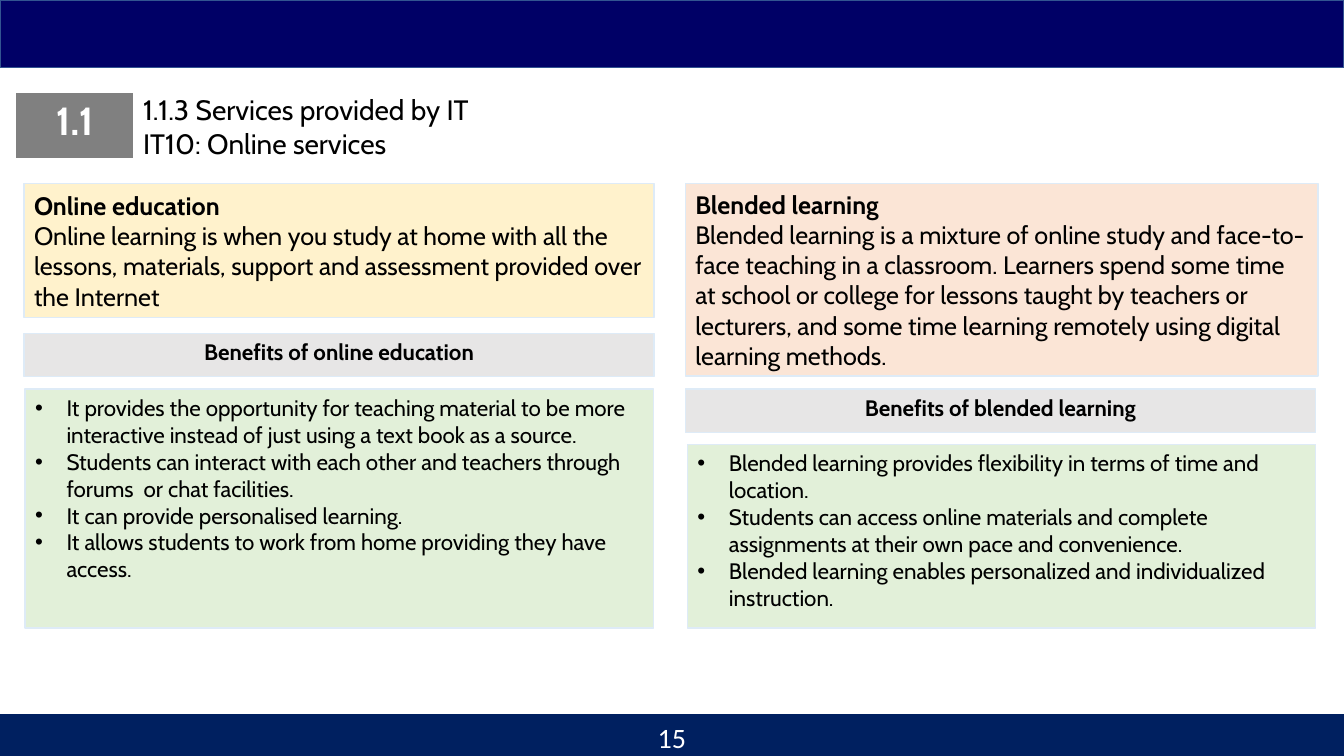
import dataclasses

import lxml.etree
import pptx
import pptx.dml.color
import pptx.enum.shapes
import pptx.enum.text
import pptx.oxml.ns
import pptx.util

Pt = pptx.util.Pt
Align = pptx.enum.text.PP_ALIGN
Anchor = pptx.enum.text.MSO_ANCHOR


@dataclasses.dataclass(frozen=True)
class Theme:
    font: str = "Cabin"
    number_font: str = "Calibri"
    ink: str = "000000"
    white: str = "FFFFFF"
    banner: str = "000066"
    banner_edge: str = "325491"
    footer: str = "002060"
    badge: str = "808080"
    panel_edge: str = "DEEBF7"
    online: str = "FFF2CC"
    blended: str = "FBE5D6"
    caption: str = "E7E6E6"
    benefits: str = "E2F0D9"
    badge_size: float = 28
    heading_size: float = 20
    definition_size: float = 18
    list_size: float = 16


THEME = Theme()
SLIDE_WIDTH, SLIDE_HEIGHT = 960, 540
BENEFITS_BOTTOM = 448.6


def rgb(code):
    return pptx.dml.color.RGBColor.from_string(code)


def add_bullet(paragraph, indent=22.5):
    properties = paragraph._p.get_or_add_pPr()
    properties.set("marL", str(Pt(indent)))
    properties.set("indent", str(-Pt(indent)))
    for tag, attribute, value in (("a:buFont", "typeface", "Arial"), ("a:buChar", "char", "•")):
        bullet = lxml.etree.SubElement(properties, pptx.oxml.ns.qn(tag))
        bullet.set(attribute, value)


def write(frame, lines, size, color=THEME.ink, font=THEME.font, align=Align.LEFT,
          anchor=Anchor.TOP, bold_lines=0, bullets=False):
    """Fill a frame with one paragraph per line; the first bold_lines are bold."""
    frame.word_wrap = True
    frame.vertical_anchor = anchor
    for index, line in enumerate(lines):
        paragraph = frame.paragraphs[0] if index == 0 else frame.add_paragraph()
        paragraph.alignment = align
        paragraph.line_spacing = 1.0
        paragraph.space_before = paragraph.space_after = Pt(0)
        if bullets:
            add_bullet(paragraph)
        run = paragraph.add_run()
        run.text = line
        run.font.name = font
        run.font.size = Pt(size)
        run.font.bold = index < bold_lines
        run.font.color.rgb = rgb(color)


def paint(shape, fill, edge):
    shape.fill.solid()
    shape.fill.fore_color.rgb = rgb(fill)
    shape.line.color.rgb = rgb(edge)
    shape.line.width = Pt(1)


def add_panel(slide, box, fill, edge):
    panel = slide.shapes.add_shape(pptx.enum.shapes.MSO_SHAPE.RECTANGLE, *map(Pt, box))
    panel.shadow.inherit = False
    paint(panel, fill, edge)
    return panel


def place(placeholder, box):
    placeholder.left, placeholder.top, placeholder.width, placeholder.height = map(Pt, box)
    placeholder.text_frame.auto_size = pptx.enum.text.MSO_AUTO_SIZE.NONE
    return placeholder.text_frame


def set_borders(cell, color, **widths):
    """Draw cell borders with widths in points, keyed by L, R, T and B in that order."""
    properties = cell._tc.get_or_add_tcPr()
    for position, (side, width) in enumerate(widths.items()):
        border = lxml.etree.Element(pptx.oxml.ns.qn(f"a:ln{side}"), w=str(Pt(width)))
        solid = lxml.etree.SubElement(border, pptx.oxml.ns.qn("a:solidFill"))
        lxml.etree.SubElement(solid, pptx.oxml.ns.qn("a:srgbClr"), val=color)
        properties.insert(position, border)


def add_strip(slide, box, columns, fill, edge, bottom_edge):
    """Add a one-row table and return its cells."""
    table = slide.shapes.add_table(1, columns, *map(Pt, box)).table
    table.first_row = table.horz_banding = False
    for cell in table.iter_cells():
        cell.fill.solid()
        cell.fill.fore_color.rgb = rgb(fill)
        set_borders(cell, edge, L=1, R=1, T=1, B=bottom_edge)
    return list(table.iter_cells())


def add_topic(slide, caption, benefits, left, definition, definition_box, fill,
              caption_text, caption_top, benefit_lines, benefits_box):
    """Stack a definition, a caption and a list of benefits in one column."""
    panel = add_panel(slide, definition_box, fill, THEME.panel_edge)
    write(panel.text_frame, definition, THEME.definition_size,
          anchor=Anchor.MIDDLE, bold_lines=1)

    paint(caption, THEME.caption, THEME.panel_edge)
    write(place(caption, (left, caption_top, 450, 31)), [caption_text],
          THEME.list_size, align=Align.CENTER, bold_lines=1)

    paint(benefits, THEME.benefits, THEME.panel_edge)
    write(place(benefits, benefits_box), benefit_lines, THEME.list_size, bullets=True)


def main():
    deck = pptx.Presentation()
    deck.slide_width, deck.slide_height = Pt(SLIDE_WIDTH), Pt(SLIDE_HEIGHT)
    slide = deck.slides.add_slide(deck.slide_layouts.get_by_name("Comparison"))
    title, online_caption, online_list, blended_caption, blended_list = slide.placeholders

    add_panel(slide, (0, 0, SLIDE_WIDTH, 48.3), THEME.banner, THEME.banner_edge)
    add_strip(slide, (0, 510.5, SLIDE_WIDTH, 29.5), 3, THEME.footer, THEME.footer, 1)
    write(place(title, (95, 62.6, 793, 55.4)),
          ["1.1.3 Services provided by IT", "IT10: Online services"], THEME.heading_size)
    badge, = add_strip(slide, (11, 66.2, 84.6, 48), 1, THEME.badge, THEME.white, 3)
    write(badge.text_frame, ["1.1"], THEME.badge_size, color=THEME.white,
          align=Align.CENTER, bold_lines=1)

    add_topic(
        slide, online_caption, online_list, left=17.2,
        definition=[
            "Online education",
            "Online learning is when you study at home with all the lessons, materials, "
            "support and assessment provided over the Internet",
        ],
        definition_box=(17.2, 131, 450, 96), fill=THEME.online,
        caption_text="Benefits of online education", caption_top=238,
        benefit_lines=[
            "It provides the opportunity for teaching material to be more interactive "
            "instead of just using a text book as a source.",
            "Students can interact with each other and teachers through forums  or chat "
            "facilities.",
            "It can provide personalised learning.",
            "It allows students to work from home providing they have access.",
        ],
        benefits_box=(17.8, 278, 448.8, BENEFITS_BOTTOM - 278))
    add_topic(
        slide, blended_caption, blended_list, left=489.6,
        definition=[
            "Blended learning",
            "Blended learning is a mixture of online study and face-to-face teaching in a "
            "classroom. Learners spend some time at school or college for lessons taught by "
            "teachers or lecturers, and some time learning remotely using digital learning "
            "methods.",
        ],
        definition_box=(489.6, 131, 452, 137.5), fill=THEME.blended,
        caption_text="Benefits of blended learning", caption_top=278,
        benefit_lines=[
            "Blended learning provides flexibility in terms of time and location.",
            "Students can access online materials and complete assignments at their own pace "
            "and convenience.",
            "Blended learning enables personalized and individualized instruction.",
        ],
        benefits_box=(491, 317.5, 448.8, BENEFITS_BOTTOM - 317.5))

    page_number = slide.shapes.add_textbox(Pt(372), Pt(511), Pt(216), Pt(29))
    write(page_number.text_frame, ["15"], THEME.heading_size, color=THEME.white,
          font=THEME.number_font, align=Align.CENTER)
    deck.save("out.pptx")


if __name__ == "__main__":
    main()
